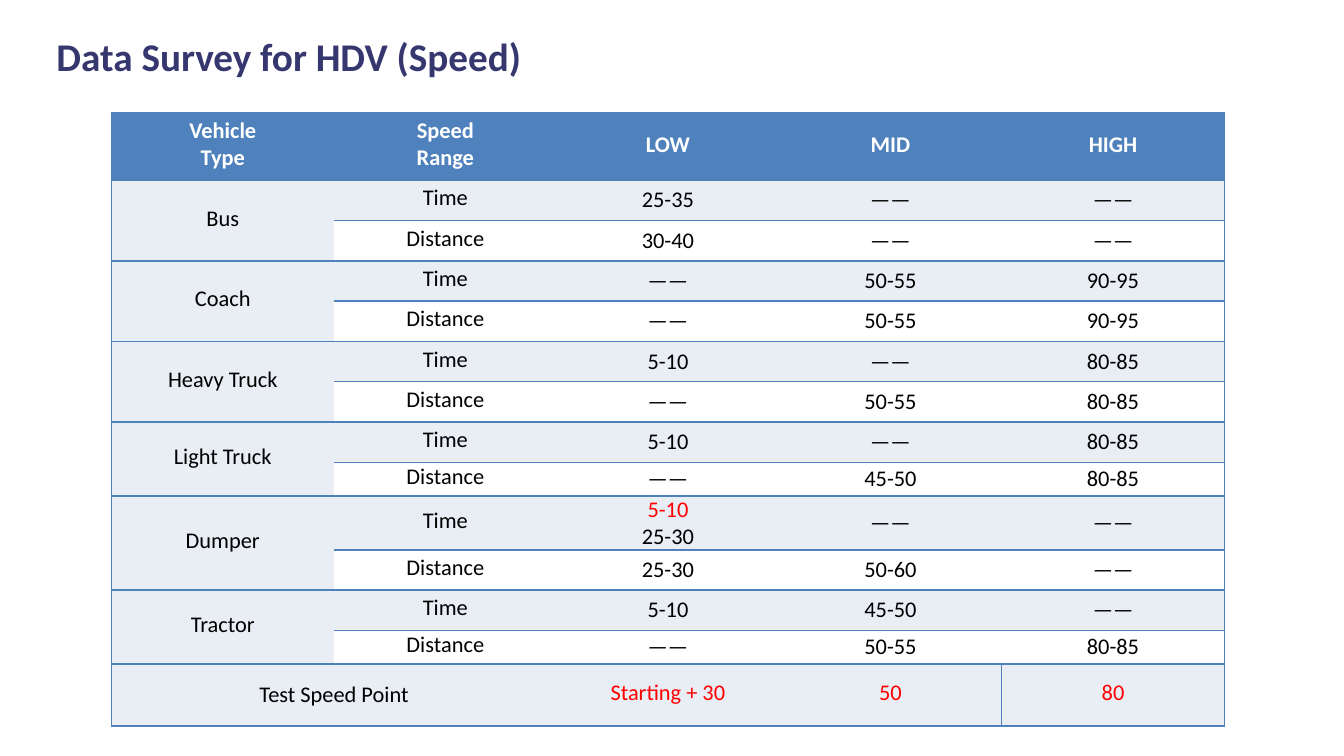
from lxml import etree
from pptx import Presentation
from pptx import util as u
from pptx.dml.color import RGBColor
from pptx.enum import text
from pptx.oxml import ns

BLUE = RGBColor(0x4F, 0x81, 0xBD)
PALE = RGBColor(0xE9, 0xED, 0xF4)
WHITE = RGBColor(0xFF, 0xFF, 0xFF)
BLACK = RGBColor(0, 0, 0)
RED = RGBColor(0xFF, 0, 0)
NAVY = RGBColor(0x36, 0x37, 0x6F)

FONT = "Calibri"
PLAIN = "{2D5ABB26-0587-4C30-8999-92F81FD0307C}"
TIGHT = (0.01, 0.01, 0.01, 0.04)
FLAT = (0.07, 0, 0.07, 0)
ROOMY = (0.07, 0.04, 0.07, 0.04)
NONE = "——"

HEADS = ["Vehicle\nType", "Speed\nRange", "LOW", "MID", "HIGH"]
SURVEY = [
    ("Bus", ["25-35", NONE, NONE], ["30-40", NONE, NONE]),
    ("Coach", [NONE, "50-55", "90-95"], [NONE, "50-55", "90-95"]),
    ("Heavy Truck", ["5-10", NONE, "80-85"], [NONE, "50-55", "80-85"]),
    ("Light Truck", ["5-10", NONE, "80-85"], [NONE, "45-50", "80-85"]),
    ("Dumper", ["5-10\n25-30", NONE, NONE], ["25-30", "50-60", NONE]),
    ("Tractor", ["5-10", "45-50", NONE], [NONE, "50-55", "80-85"]),
]
POINTS = ["Starting + 30", "50", "80"]
SHORT = ("Light Truck", "Tractor")


def add_run(para, words, size, color, bold=False):
    run = para.add_run()
    run.text = words
    font = run.font
    font.name, font.size, font.bold = FONT, u.Pt(size), bold
    font.color.rgb = color


def add_edge(cell, side, width=1):
    line = etree.SubElement(cell._tc.get_or_add_tcPr(), ns.qn("a:ln" + side), w=str(u.Pt(width)))
    fill = etree.SubElement(line, ns.qn("a:solidFill"))
    etree.SubElement(fill, ns.qn("a:srgbClr"), val=str(BLUE))


def fill_cell(cell, words, fill, pads, colors=(BLACK,), bold=False):
    cell.fill.solid()
    cell.fill.fore_color.rgb = fill
    cell.vertical_anchor = text.MSO_ANCHOR.MIDDLE
    (cell.margin_left, cell.margin_top,
     cell.margin_right, cell.margin_bottom) = map(u.Inches, pads)
    frame = cell.text_frame
    for i, part in enumerate(words.split("\n")):
        para = frame.paragraphs[0] if i == 0 else frame.add_paragraph()
        para.alignment = text.PP_ALIGN.CENTER
        add_run(para, part, 12, colors[min(i, len(colors) - 1)], bold)


def add_title(slide, left, top, width, height):
    title = slide.shapes.title
    title.left, title.top = u.Inches(left), u.Inches(top)
    title.width, title.height = u.Inches(width), u.Inches(height)
    frame = title.text_frame
    frame.word_wrap = True
    frame.auto_size = text.MSO_AUTO_SIZE.SHAPE_TO_FIT_TEXT
    frame.vertical_anchor = text.MSO_ANCHOR.TOP
    para = frame.paragraphs[0]
    para.alignment = text.PP_ALIGN.LEFT
    add_run(para, "Data Survey for HDV (Speed)", 21, NAVY, True)


def add_grid(slide, left, top, width, height):
    count, cols = 2 * len(SURVEY) + 2, len(HEADS)
    frame = slide.shapes.add_table(count, cols, u.Inches(left), u.Inches(top),
                                   u.Inches(width), u.Inches(height))
    table = frame.table
    table.first_row = table.horz_banding = False
    frame._element.find(".//" + ns.qn("a:tableStyleId")).text = PLAIN
    for col in table.columns:
        col.width = u.Inches(width / cols)
    last = count - 1

    for r in range(count):
        for c in range(cols):
            cell = table.cell(r, c)
            if c == 0:
                add_edge(cell, "L")
            if (r, c) == (last, cols - 1):
                add_edge(cell, "L", 0.5)
            if c == cols - 1:
                add_edge(cell, "R")
            if c or r % 2 or r in (0, last):
                add_edge(cell, "T")
            add_edge(cell, "B")

    table.rows[0].height = u.Inches(0.5)
    for c, head in enumerate(HEADS):
        fill_cell(table.cell(0, c), head, BLUE, TIGHT, (WHITE,), True)

    for n, (name, *pair) in enumerate(SURVEY):
        first = 2 * n + 1
        table.cell(first, 0).merge(table.cell(first + 1, 0))
        fill_cell(table.cell(first, 0), name, PALE, TIGHT)
        kinds = zip(("Time", "Distance"), (PALE, WHITE), pair)
        for r, (kind, fill, speeds) in enumerate(kinds, first):
            small = name in SHORT and kind == "Distance"
            table.rows[r].height = u.Inches(0.25 if small else 0.3)
            fill_cell(table.cell(r, 1), kind, fill, TIGHT)
            for c, speed in enumerate(speeds, 2):
                colors = (RED, BLACK) if "\n" in speed else (BLACK,)
                fill_cell(table.cell(r, c), speed, fill, FLAT, colors)

    table.rows[last].height = u.Inches(0.46)
    table.cell(last, 0).merge(table.cell(last, 1))
    fill_cell(table.cell(last, 0), "Test Speed Point", PALE, ROOMY)
    for c, point in enumerate(POINTS, 2):
        fill_cell(table.cell(last, c), point, PALE, TIGHT, (RED,))


def main():
    deck = Presentation()
    deck.slide_width = u.Inches(10)
    deck.slide_height = u.Inches(10 * 9 / 16)
    slide = deck.slides.add_slide(deck.slide_layouts[5])
    add_grid(slide, 0.83, 0.84, 8.28, 4.53)
    add_title(slide, 0.32, 0.19, 5, 0.45)
    deck.save("out.pptx")


if __name__ == "__main__":
    main()
